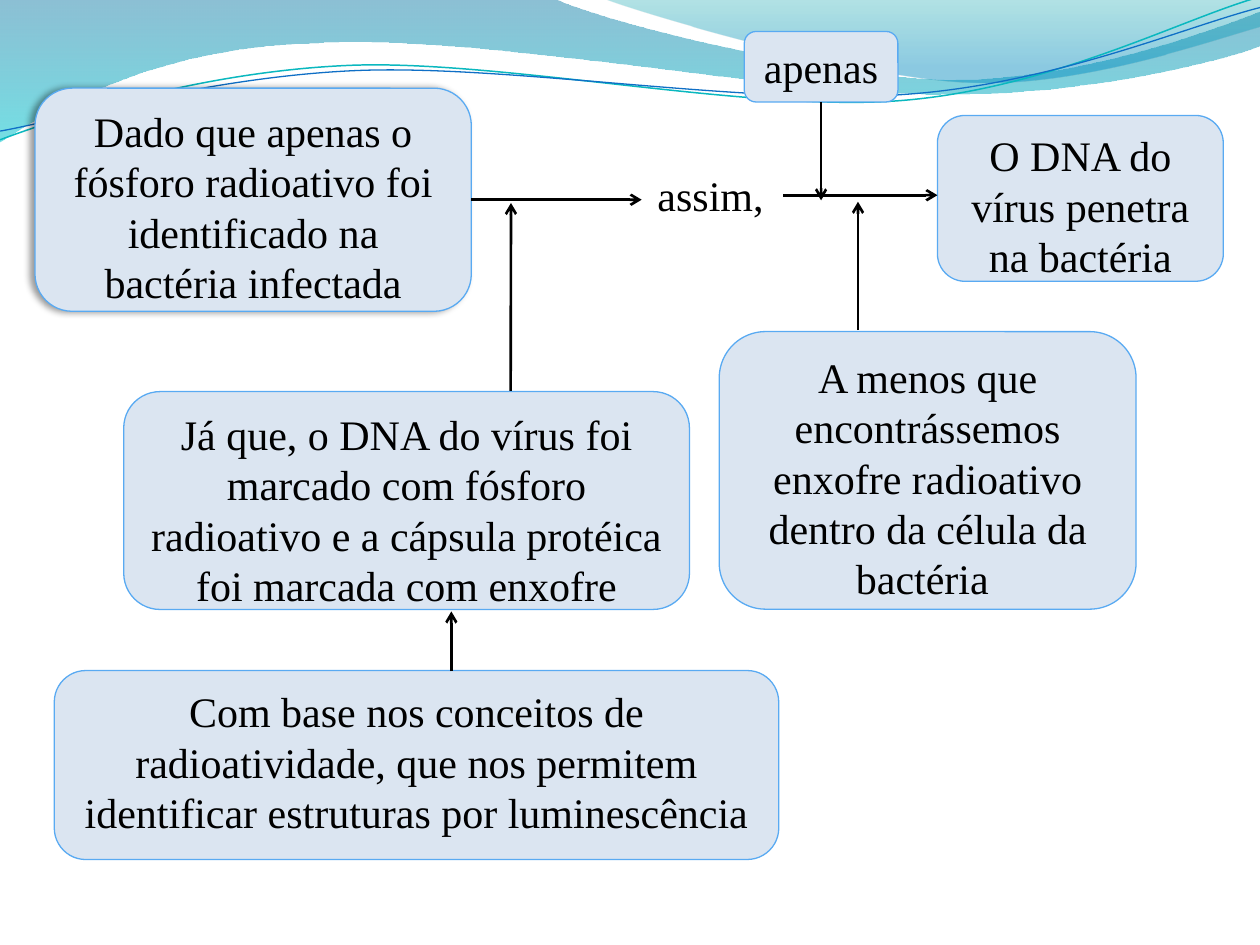
from dataclasses import dataclass

from lxml.etree import SubElement
from pptx import Presentation
from pptx.dml.color import RGBColor
from pptx.enum.shapes import MSO_CONNECTOR, MSO_SHAPE
from pptx.enum.text import MSO_ANCHOR, PP_ALIGN
from pptx.oxml.ns import qn
from pptx.util import Pt


@dataclass(frozen=True)
class Theme:
    """Colours, font and sizes of the slide."""
    box: str = "DBE5F1"
    border: str = "59AAF2"
    ink: str = "000000"
    teal: str = "0AB8BF"
    blue: str = "0F6FC6"
    wide_wave: tuple = ((0, "0074A1", 45), (100, "00C6CF", 55))
    right_wave: tuple = ((0, "00A1A9", 30), (80, "008BBF", 45))
    font: str = "Times New Roman"
    size: float = 24
    border_width: float = 0.75
    arrow_width: float = 1.5


THEME = Theme()

WIDE_WAVE = [
    (0, 0), (316.8, -0.7),
    (342.7, 12.2, 478.1, 45.4, 545.8, 45.4),
    (614.2, 45.4, 689.8, 18.7, 720, 6.5),
    (720.7, 25.9),
    (707.8, 31.7, 626.4, 54.7, 537.1, 54),
    (447.8, 54, 275, 20.2, 185, 24.5),
    (92.9, 25.9, 33.1, 59.8, -0.7, 81.4),
    (0, 0),
]
RIGHT_WAVE = [
    (344.9, -0.7),
    (366.5, 7.9, 491, 44.6, 553.7, 46.8),
    (616.3, 49.7, 691.9, 23, 720, 15.1),
    (720, 0), (344.9, -0.7),
]
TEAL_CURVE = [
    (0, 79.9),
    (34.6, 67, 113.8, 41, 199.4, 37.4),
    (284.4, 33.8, 427, 64.1, 513.4, 57.6),
    (599.8, 51.1, 675.4, 10.8, 718.6, -1.4),
]
BLUE_CURVE = [
    (0, 74.9),
    (33.8, 69.1, 118.1, 43.9, 203.8, 40.3),
    (290.2, 36.7, 429.8, 60.5, 516.2, 54),
    (601.9, 48.2, 677.5, 15.1, 720, 4.3),
]


def rgb(value):
    """Return a colour from its hex digits."""
    return RGBColor.from_string(value)


def add_curve(s, steps, closed):
    """Add a freeform whose six-number steps are cubic curves."""
    ends = [(Pt(step[-2]), Pt(step[-1])) for step in steps]
    builder = s.shapes.build_freeform(*ends[0])
    builder.add_line_segments(ends[1:], close=closed)
    sp = builder.convert_to_shape()
    sp.shadow.inherit = False
    segments = list(sp._element.spPr.iter(qn("a:lnTo")))
    for segment, step in zip(segments, steps[1:]):
        if len(step) == 6:
            curve = segment.getparent().makeelement(qn("a:cubicBezTo"))
            for x, y in zip(step[::2], step[1::2]):
                SubElement(curve, qn("a:pt"), x=str(Pt(x) - sp.left), y=str(Pt(y) - sp.top))
            segment.getparent().replace(segment, curve)
    return sp


def add_wave(s, steps, stops):
    """Add a wave with a translucent vertical gradient."""
    sp = add_curve(s, steps, True)
    sp.line.fill.background()
    sp.fill.gradient()
    sp.fill.gradient_angle = 270
    for stop, (position, color, _) in zip(sp.fill.gradient_stops, stops):
        stop.position = position / 100
        stop.color.rgb = rgb(color)
    colors = sp._element.spPr.iter(qn("a:srgbClr"))
    for node, (_, _, alpha) in zip(colors, stops):
        SubElement(node, qn("a:alpha"), val=str(alpha * 1000))


def add_stroke(s, steps, color, width):
    """Add an open decorative curve."""
    sp = add_curve(s, steps, False)
    sp.fill.background()
    sp.line.color.rgb = rgb(color)
    sp.line.width = Pt(width)


def write_text(sp, text, align=PP_ALIGN.CENTER, size=THEME.size, color=THEME.ink):
    """Write one formatted paragraph into a shape."""
    tf = sp.text_frame
    tf.word_wrap = True
    tf.vertical_anchor = MSO_ANCHOR.TOP
    p = tf.paragraphs[0]
    p.alignment = align
    r = p.add_run()
    r.text = text
    r.font.name = THEME.font
    r.font.size = Pt(size)
    r.font.color.rgb = rgb(color)


def add_box(s, text, left, top, width, height, filled=True, **text_format):
    """Add a rounded box with text."""
    sp = s.shapes.add_shape(MSO_SHAPE.ROUNDED_RECTANGLE,
                            Pt(left), Pt(top), Pt(width), Pt(height))
    sp.shadow.inherit = False
    if filled:
        sp.fill.solid()
        sp.fill.fore_color.rgb = rgb(THEME.box)
        sp.line.color.rgb = rgb(THEME.border)
        sp.line.width = Pt(THEME.border_width)
    else:
        sp.fill.background()
        sp.line.fill.background()
    write_text(sp, text, **text_format)
    return sp


def add_shadow(sp):
    """Give a shape a soft shadow towards the left."""
    effects = sp._element.spPr.find(qn("a:effectLst"))
    shadow = SubElement(effects, qn("a:outerShdw"), blurRad=str(Pt(4)),
                        dist=str(Pt(3)), dir="10800000", algn="r", rotWithShape="0")
    color = SubElement(shadow, qn("a:srgbClr"), val=THEME.ink)
    SubElement(color, qn("a:alpha"), val="40000")


def add_arrow(s, x1, y1, x2, y2, source=None, side=None):
    """Add an arrow, joined to the side of a source box if given."""
    cx = s.shapes.add_connector(MSO_CONNECTOR.STRAIGHT, Pt(x1), Pt(y1), Pt(x2), Pt(y2))
    if source is not None:
        cx.begin_connect(source, side)
    cx.line.color.rgb = rgb(THEME.ink)
    cx.line.width = Pt(THEME.arrow_width)
    properties = cx._element.spPr
    SubElement(properties.find(qn("a:ln")), qn("a:tailEnd"), type="arrow")
    SubElement(properties, qn("a:effectLst"))


def main():
    """Build the argument diagram and save it."""
    prs = Presentation()
    prs.slide_width, prs.slide_height = Pt(720), Pt(540)
    s = prs.slides.add_slide(prs.slide_layouts[6])

    add_wave(s, WIDE_WAVE, THEME.wide_wave)
    add_wave(s, RIGHT_WAVE, THEME.right_wave)
    add_stroke(s, TEAL_CURVE, THEME.teal, 0.85)
    add_stroke(s, BLUE_CURVE, THEME.blue, 0.75)

    data = add_box(s, "Dado que apenas o fósforo radioativo foi identificado na "
                   "bactéria infectada", 20, 50.4, 249.3, 127.5)
    add_shadow(data)
    thus = add_box(s, "assim,", 366.7, 91.4, 80.8, 40.3,
                   filled=False, align=PP_ALIGN.LEFT)
    add_box(s, "Já que, o DNA do vírus foi marcado com fósforo radioativo e a "
            "cápsula protéica foi marcada com enxofre", 70.7, 223.8, 323.3, 124.5)
    add_box(s, "Com base nos conceitos de radioatividade, que nos permitem "
            "identificar estruturas por luminescência", 31, 383.2, 414, 108)
    add_box(s, "O DNA do vírus penetra na bactéria", 535.7, 66, 163.4, 94.8)
    add_box(s, "A menos que encontrássemos enxofre radioativo dentro da célula "
            "da bactéria ", 411, 189.5, 238.2, 158.6)
    only = add_box(s, "apenas", 425.3, 18, 87.8, 40.3)

    add_arrow(s, 269.3, 114.15, 366.7, 114.15, data, 3)
    add_arrow(s, 447.5, 111.55, 535.7, 111.55, thus, 3)
    add_arrow(s, 469.2, 58.3, 469.2, 114.5, only, 2)
    add_arrow(s, 291.8, 223.4, 292, 116)
    add_arrow(s, 257.9, 383.5, 257.9, 349.4)
    add_arrow(s, 490.3, 188.6, 490.3, 115.3)

    prs.save("out.pptx")


if __name__ == "__main__":
    main()
